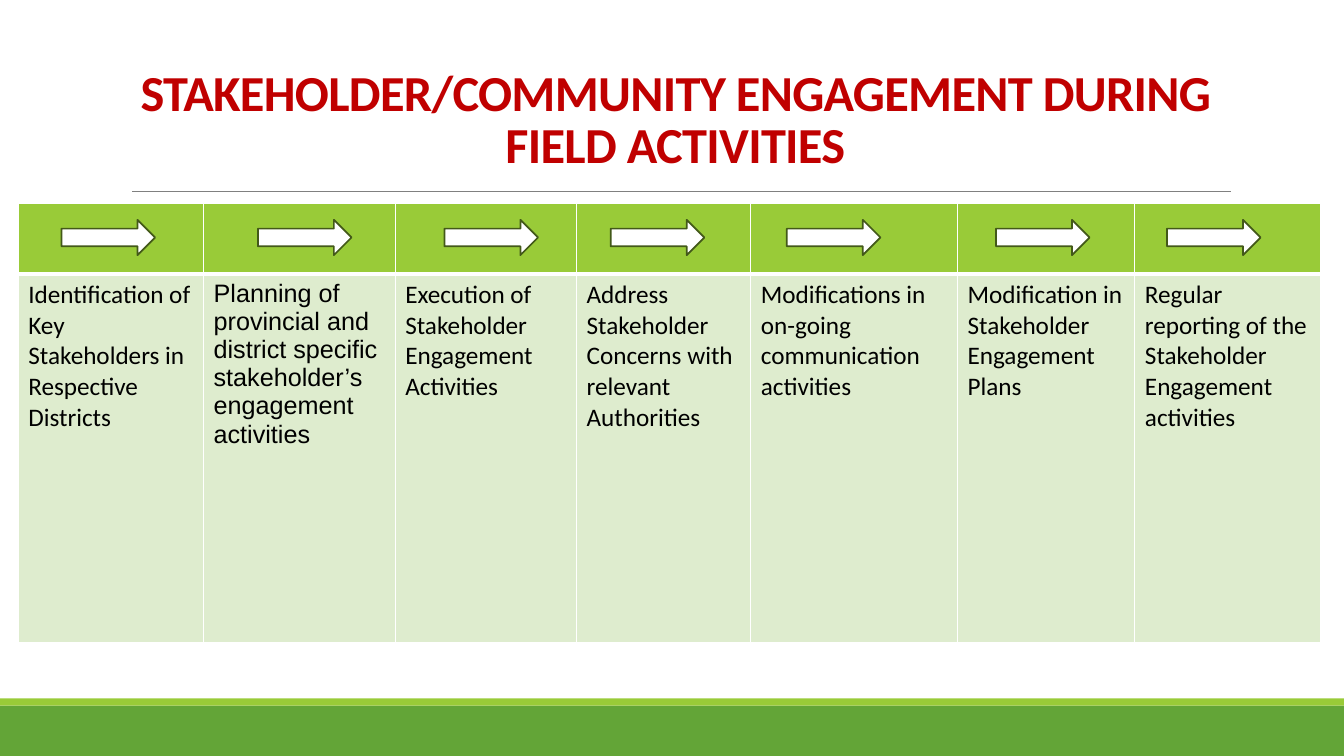
from dataclasses import dataclass

from lxml import etree
from pptx import Presentation
from pptx.dml.color import RGBColor
from pptx.enum.shapes import MSO_CONNECTOR, MSO_SHAPE
from pptx.enum.text import MSO_ANCHOR, PP_ALIGN
from pptx.oxml.ns import qn
from pptx.util import Cm, Pt

RECT, ARROW = MSO_SHAPE.RECTANGLE, MSO_SHAPE.RIGHT_ARROW
STRAIGHT = MSO_CONNECTOR.STRAIGHT
BOTTOM = MSO_ANCHOR.BOTTOM
LEFT, CENTER = PP_ALIGN.LEFT, PP_ALIGN.CENTER


@dataclass(frozen=True)
class Theme:
    title: str = "C00000"
    text: str = "000000"
    white: str = "FFFFFF"
    rule: str = "808080"
    footer: str = "63A537"
    accent: str = "99CB38"
    body: str = "DEECCE"
    arrow_line: str = "435919"
    font: str = "Calibri"
    alt_font: str = "Arial"
    title_size: int = 36
    body_size: int = 18


THEME = Theme()
SLIDE_W, SLIDE_H = 33.87, 19.05
TITLE = "STAKEHOLDER/COMMUNITY ENGAGEMENT DURING FIELD ACTIVITIES"

# Step text, font, column width and arrow offset in the column (cm)
STEPS = [
    ("Identification of Key Stakeholders in Respective Districts", THEME.font, 4.67, 1.09),
    ("Planning of provincial and district specific stakeholder’s engagement activities",
     THEME.alt_font, 4.83, 1.37),
    ("Execution of Stakeholder Engagement Activities", THEME.font, 4.57, 1.24),
    ("Address Stakeholder Concerns with relevant Authorities", THEME.font, 4.39, 0.86),
    ("Modifications in on-going communication activities", THEME.font, 5.21, 0.91),
    ("Modification in Stakeholder Engagement Plans", THEME.font, 4.47, 0.97),
    ("Regular reporting of the Stakeholder Engagement activities", THEME.font, 4.67, 0.81),
]
HEADER_H, BODY_H = 1.78, 9.27
ARROW_W, ARROW_H, ARROW_TOP = 2.36, 0.89, 0.41


def rgb(color):
    return RGBColor.from_string(color)


def write(tf, text, size, color, font=THEME.font, bold=False, align=LEFT,
          line_spacing=None, tracking=None):
    p = tf.paragraphs[0]
    p.alignment = align
    if line_spacing:
        p.line_spacing = line_spacing
    r = p.add_run()
    r.text = text
    r.font.name, r.font.size, r.font.bold = font, Pt(size), bold
    r.font.color.rgb = rgb(color)
    if tracking:
        r.font._element.set("spc", str(round(tracking * 100)))


def add_box(s, kind, x, y, w, h, fill, line=None, line_width=1.25):
    sp = s.shapes.add_shape(kind, Cm(x), Cm(y), Cm(w), Cm(h))
    sp.shadow.inherit = False
    sp.fill.solid()
    sp.fill.fore_color.rgb = rgb(fill)
    if line:
        sp.line.color.rgb = rgb(line)
        sp.line.width = Pt(line_width)
    else:
        sp.line.fill.background()


def add_footer(s, x, y, w, h, stripe=0.18):
    add_box(s, RECT, x, y + stripe, w, h - stripe, THEME.footer)
    add_box(s, RECT, x, y, w, stripe, THEME.accent)


def add_title(s, x, y, w, h):
    """Place the heading with its rule below."""
    rule_x, rule_y, rule_w = x + 0.28, y + h + 0.33, 27.69
    rule = s.shapes.add_connector(STRAIGHT, Cm(rule_x), Cm(rule_y),
                                  Cm(rule_x + rule_w), Cm(rule_y))
    rule.line.color.rgb = rgb(THEME.rule)
    rule.line.width = Pt(0.5)
    etree.SubElement(rule._element.spPr, qn("a:effectLst"))

    tf = s.shapes.add_textbox(Cm(x), Cm(y), Cm(w), Cm(h)).text_frame
    tf.word_wrap = True
    tf.vertical_anchor = BOTTOM
    write(tf, TITLE, THEME.title_size, THEME.title, bold=True, align=CENTER,
          line_spacing=0.85, tracking=-0.5)


def style_cell(cell, fill, top, bottom):
    """Set white borders (widths in points) and the fill."""
    tc_pr = cell._tc.get_or_add_tcPr()
    for side, width in (("L", 1), ("R", 1), ("T", top), ("B", bottom)):
        ln = etree.SubElement(tc_pr, qn(f"a:ln{side}"), w=str(Pt(width)))
        solid = etree.SubElement(ln, qn("a:solidFill"))
        etree.SubElement(solid, qn("a:srgbClr"), val=THEME.white)
    cell.fill.solid()
    cell.fill.fore_color.rgb = rgb(fill)


def add_steps(s, x, y, w, h):
    """Place the table of steps and an arrow above each step."""
    table = s.shapes.add_table(2, len(STEPS), Cm(x), Cm(y), Cm(w), Cm(h)).table
    table.horz_banding = False
    table.rows[0].height, table.rows[1].height = Cm(HEADER_H), Cm(h - HEADER_H)
    for col, (text, font, width, offset) in enumerate(STEPS):
        table.columns[col].width = Cm(width)
        style_cell(table.cell(0, col), THEME.accent, 1, 3)
        body = table.cell(1, col)
        style_cell(body, THEME.body, 3, 1)
        write(body.text_frame, text, THEME.body_size, THEME.text, font=font)
        add_box(s, ARROW, x + offset, y + ARROW_TOP, ARROW_W, ARROW_H,
                THEME.white, line=THEME.arrow_line)
        x += width


def main():
    prs = Presentation()
    prs.slide_width, prs.slide_height = Cm(SLIDE_W), Cm(SLIDE_H)
    s = prs.slides.add_slide(prs.slide_layouts[6])
    add_footer(s, 0, 17.6, SLIDE_W, SLIDE_H - 17.6)
    add_title(s, 3.05, 0.79, 27.94, 3.71)
    add_steps(s, 0.46, 5.13, sum(step[2] for step in STEPS), HEADER_H + BODY_H)
    prs.save("out.pptx")


if __name__ == "__main__":
    main()
